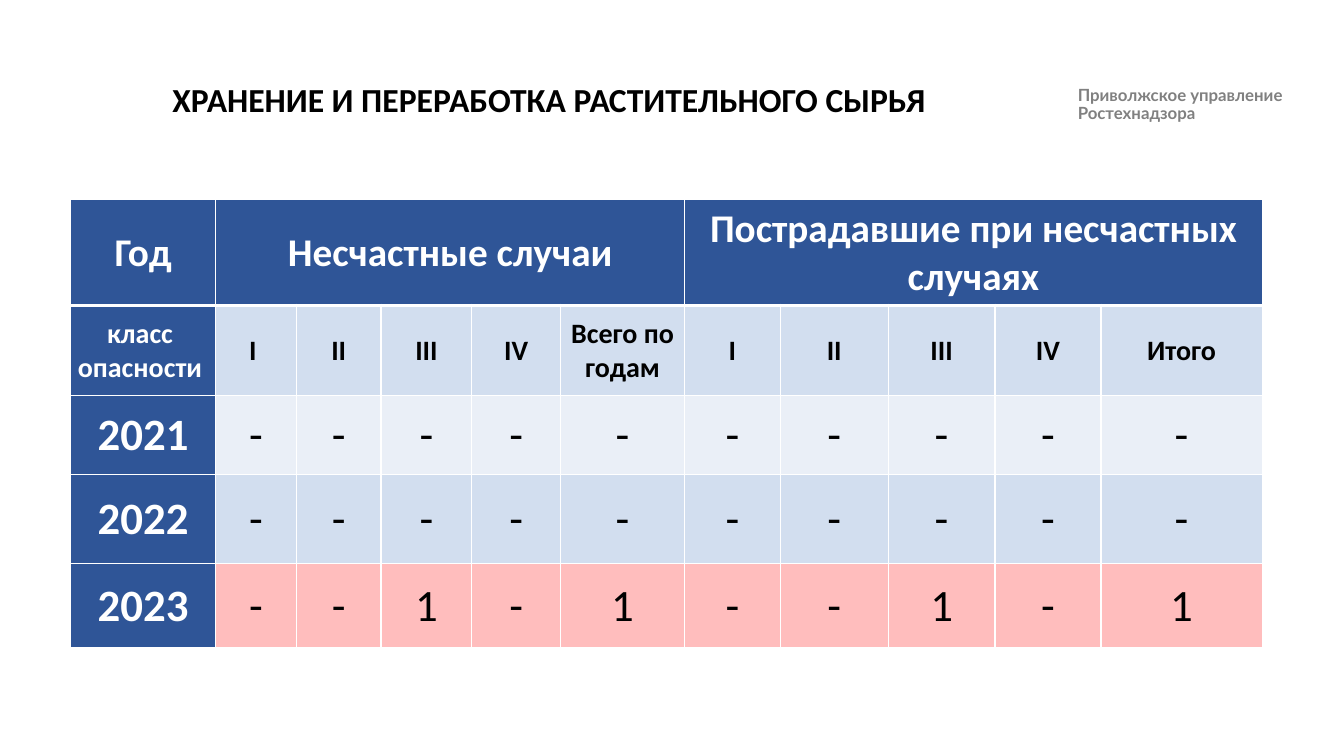
from lxml import etree
from pptx import Presentation, util as u
from pptx.dml.color import RGBColor
from pptx.enum import text
from pptx.oxml import ns

NAVY = RGBColor(0x2F, 0x55, 0x97)
PALE = RGBColor(0xD2, 0xDE, 0xEF)
PALER = RGBColor(0xEA, 0xEF, 0xF7)
PINK = RGBColor(0xFF, 0xBD, 0xBD)
WHITE = RGBColor(0xFF, 0xFF, 0xFF)
BLACK = RGBColor(0, 0, 0)
GRAY = RGBColor(0x80, 0x80, 0x80)

COLUMNS = [1.44, 0.8, 0.84, 0.9, 0.88, 1.23, 0.95, 1.07, 1.06, 1.05, 1.6]
ROWS = [1.05, 0.89, 0.79, 0.88, 0.84]
CLASSES = ["II", "III", "IV"]
ACCIDENTS, VICTIMS = 1, 6
TABLE_ROWS = [
    ["Год", "Несчастные случаи", "", "", "", "",
     "Пострадавшие при несчастных случаях", "", "", "", ""],
    ["класс \nопасности ", "I ", *CLASSES, "Всего по годам", "I", *CLASSES, "Итого"],
    ["2021"] + ["-"] * 10,
    ["2022"] + ["-"] * 10,
    ["2023"] + ["-", "-", "1", "-", "1"] * 2,
]
ROW_FILLS = [NAVY, PALE, PALER, PALE, PINK]
ROW_SIZES = [28, 20, 32, 32, 32]


def write(frame, content, align, spacing, **font):
    """Fill a text frame, one paragraph a line, in a single font format."""
    frame.text = content
    for para in frame.paragraphs:
        para.alignment = align
        para.line_spacing = spacing
        for span in para.runs:
            span.font.color.rgb = font["color"]
            for key in ("name", "size", "bold"):
                setattr(span.font, key, font[key])


def add_border(cell, side, points):
    line = etree.SubElement(cell._tc.get_or_add_tcPr(), ns.qn(f"a:ln{side}"),
                            w=str(u.Pt(points)))
    fill = etree.SubElement(line, ns.qn("a:solidFill"))
    etree.SubElement(fill, ns.qn("a:srgbClr"), val=str(WHITE))


deck = Presentation()
deck.slide_width, deck.slide_height = u.Inches(13.33), u.Inches(7.5)
page = deck.slides.add_slide(deck.slide_layouts[6])
across, down = deck.slide_width / 100, deck.slide_height / 100

# Agency name and title, placed in percent of the slide
agency = page.shapes.add_textbox(int(70.6 * across), int(10.8 * down),
                                 int(28.7 * across), int(6.1 * down))
agency.text_frame.word_wrap = True
write(agency.text_frame, "Приволжское управление\nРостехнадзора", text.PP_ALIGN.LEFT,
      0.9, name="Lato", size=u.Pt(12), bold=True, color=GRAY)
for para in agency.text_frame.paragraphs:
    para._p.get_or_add_pPr().set("marL", str(u.Inches(1.18)))

title = page.shapes.add_textbox(int(10 * across), int(10.4 * down),
                                int(61.7 * across), int(11.6 * down))
title.text_frame.word_wrap = True
write(title.text_frame, "ХРАНЕНИЕ И ПЕРЕРАБОТКА РАСТИТЕЛЬНОГО СЫРЬЯ",
      text.PP_ALIGN.CENTER, 0.9, name="Calibri", size=u.Pt(24), bold=True, color=BLACK)

# Accident table by year and hazard class
table = page.shapes.add_table(
    len(ROWS), len(COLUMNS), int(5.25 * across), int(26.4 * down),
    u.Inches(sum(COLUMNS)), u.Inches(sum(ROWS))).table
for column, width in zip(table.columns, COLUMNS):
    column.width = u.Inches(width)
for row, height in zip(table.rows, ROWS):
    row.height = u.Inches(height)
for first in (ACCIDENTS, VICTIMS):
    table.cell(0, first).merge(table.cell(0, first + 4))

CELL_FORMAT = {"margin_left": u.Inches(0.01), "margin_right": u.Inches(0.01),
               "margin_top": u.Inches(0.01), "margin_bottom": 0,
               "vertical_anchor": text.MSO_ANCHOR.MIDDLE}
for r, values in enumerate(TABLE_ROWS):
    for c, value in enumerate(values):
        cell = table.cell(r, c)
        heading = r == 0 or c == 0
        for key, setting in CELL_FORMAT.items():
            setattr(cell, key, setting)
        if r == 0:
            for side, points in (("L", 1), ("R", 1), ("T", 1), ("B", 3)):
                add_border(cell, side, points)
        cell.fill.solid()
        cell.fill.fore_color.rgb = NAVY if heading else ROW_FILLS[r]
        if value:
            write(cell.text_frame, value, text.PP_ALIGN.CENTER, 1.0, name="Calibri",
                  size=u.Pt(ROW_SIZES[r]), bold=heading or r == 1,
                  color=WHITE if heading else BLACK)

deck.save("out.pptx")
